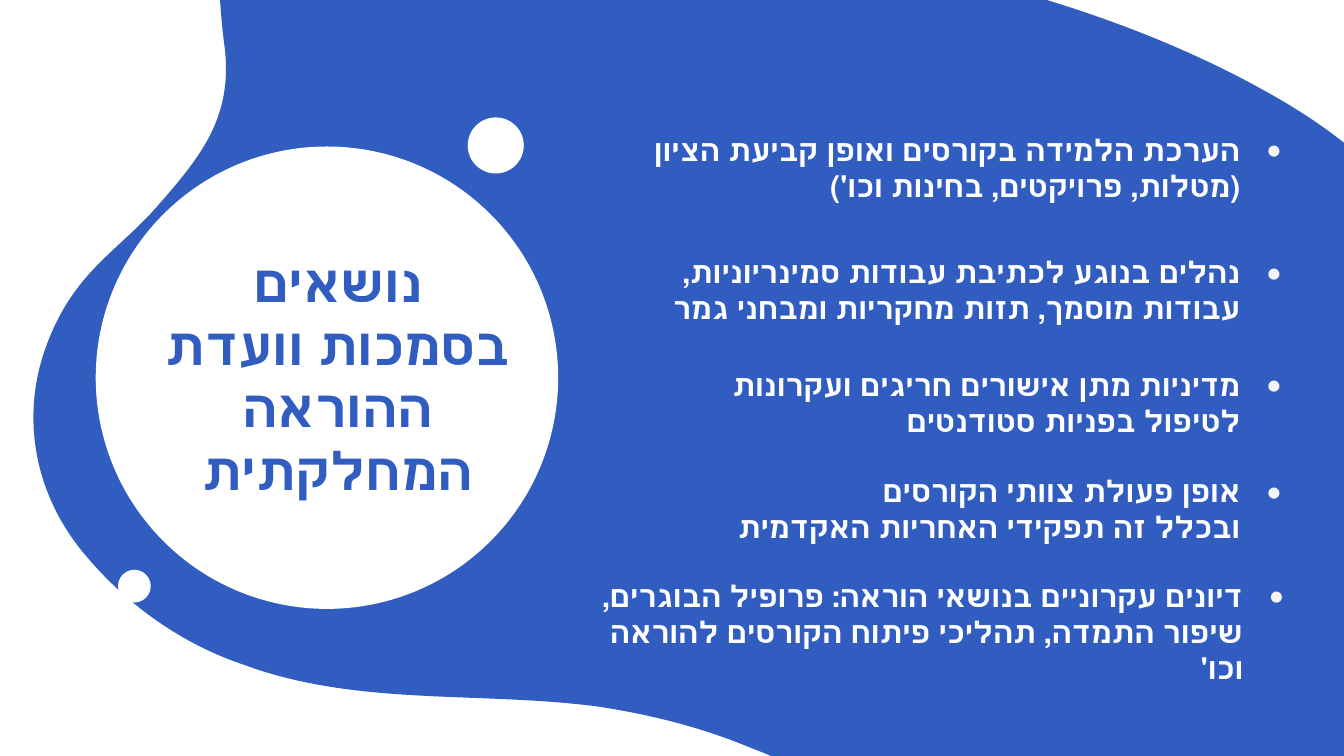
from copy import deepcopy
from dataclasses import dataclass

from lxml import etree
from pptx import Presentation
from pptx.dml.color import RGBColor
from pptx.enum.lang import MSO_LANGUAGE_ID
from pptx.enum.shapes import MSO_SHAPE
from pptx.enum.text import MSO_ANCHOR, MSO_AUTO_SIZE, PP_ALIGN
from pptx.oxml.ns import qn
from pptx.util import Cm, Pt

OVAL = MSO_SHAPE.OVAL
TOP = MSO_ANCHOR.TOP
NO_FIT = MSO_AUTO_SIZE.NONE
CENTER, RIGHT = PP_ALIGN.CENTER, PP_ALIGN.RIGHT
HEBREW = MSO_LANGUAGE_ID.HEBREW


@dataclass
class Theme:
    blue: str = "305DBF"
    white: str = "FFFFFF"
    bullet: str = "F5F5F5"
    font: str = "Lato"
    title_size: int = 28
    body_size: int = 16


theme = Theme()


def write_text(box, text, size, color, align, bullet=None):
    frame = box.text_frame
    frame.word_wrap = True
    frame.auto_size = NO_FIT
    frame.vertical_anchor = TOP
    frame.margin_left = frame.margin_right = Cm(0.25)
    frame.margin_top = frame.margin_bottom = Cm(0.25)
    para = frame.paragraphs[0]
    para.text = text
    para.alignment = align
    para.line_spacing = 1.0
    properties = para._p.get_or_add_pPr()
    properties.set("rtl", "1")
    if bullet:
        properties.set("marL", str(Cm(0.79)))
        properties.set("indent", str(-Cm(0.79)))
        bullet_color = etree.SubElement(properties, qn("a:buClr"))
        etree.SubElement(bullet_color, qn("a:srgbClr"), val=bullet)
        etree.SubElement(properties, qn("a:buFont"), typeface=theme.font)
        etree.SubElement(properties, qn("a:buChar"), char="•")
    for span in para.runs:
        span.font.name = theme.font
        span.font.size = Pt(size)
        span.font.bold = True
        span.font.language_id = HEBREW
        span.font.color.rgb = RGBColor.from_string(color)
    for line_break in para._p.findall(qn("a:br")):
        line_break.insert(0, deepcopy(para.runs[0]._r.rPr))


def paint(shape, color):
    shape.shadow.inherit = False
    shape.fill.solid()
    shape.fill.fore_color.rgb = RGBColor.from_string(color)
    shape.line.fill.background()


deck = Presentation()
deck.slide_width, deck.slide_height = Cm(25.4), Cm(14.29)
page = deck.slides.add_slide(deck.slide_layouts[5])

blob_start = (6.63, -5.72)
blob_curves = [
    (7.42, -6.05, 8.41, -6.17, 9.73, -5.94),
    (11.79, -5.59, 13.39, -3.91, 14.53, -2.26),
    (15.49, -0.86, 17.32, -0.66, 18.8, -0.28),
    (20.6, 0.2, 22.4, 0.86, 24.05, 1.8),
    (27.46, 3.73, 28.4, 6.35, 28.17, 9.63),
    (28.09, 10.31, 27.91, 12.17, 26.19, 13.92),
    (25.55, 14.61, 24.82, 15.09, 24.03, 15.42),
    (22, 16.28, 19.53, 16.13, 16.74, 15.19),
    (15.85, 14.88, 15.01, 14.45, 14.15, 14.12),
    (13.23, 13.74, 12.29, 13.51, 11.33, 13.36),
    (9.09, 13.06, 6.76, 13.36, 4.62, 12.57),
    (3.48, 12.19, 2.46, 11.48, 1.68, 10.57),
    (0.66, 9.42, 0.36, 7.9, 0.89, 6.5),
    (1.4, 5.16, 2.18, 4.78, 2.92, 3.96),
    (3.81, 2.95, 4.42, 2.21, 4.24, 0.84),
    (4.01, -0.89, 3.96, -4.6, 6.63, -5.72),
]
builder = page.shapes.build_freeform(Cm(blob_start[0]), Cm(blob_start[1]))
builder.add_line_segments([(Cm(curve[4]), Cm(curve[5])) for curve in blob_curves], close=True)
blob = builder.convert_to_shape()
paint(blob, theme.blue)
outline = blob._element.spPr.find(".//" + qn("a:path"))
for line, curve in zip(outline.findall(qn("a:lnTo")), blob_curves):
    bezier = etree.Element(qn("a:cubicBezTo"))
    for x, y in zip(curve[::2], curve[1::2]):
        etree.SubElement(bezier, qn("a:pt"), x=str(Cm(x) - blob.left), y=str(Cm(y) - blob.top))
    outline.replace(line, bezier)

circles = [(1.81, 2.77, 8.74), (8.84, 2.22, 1.06), (2.23, 10.77, 0.62)]
for left, top, diameter in circles:
    circle = page.shapes.add_shape(OVAL, Cm(left), Cm(top), Cm(diameter), Cm(diameter))
    paint(circle, theme.white)

title = page.shapes.title
title.left, title.top, title.width, title.height = Cm(2.65), Cm(4.48), Cm(7.47), Cm(3.28)
write_text(title, "נושאים בסמכות וועדת ההוראה המחלקתית",
           size=theme.title_size, color=theme.blue, align=CENTER)
page.shapes._spTree.append(title._element)

topics = [
    (10.98, 2.24, 13.51, "הערכת הלמידה בקורסים ואופן קביעת הציון (מטלות, פרויקטים, בחינות וכו')"),
    (10.98, 4.55, 13.51, "נהלים בנוגע לכתיבת עבודות סמינריוניות, \vעבודות מוסמך, תזות מחקריות ומבחני גמר"),
    (10.98, 6.68, 13.51, "מדיניות מתן אישורים חריגים ועקרונות\vלטיפול בפניות סטודנטים"),
    (10.98, 8.69, 13.51, "אופן פעולת צוותי הקורסים\vובכלל זה תפקידי האחריות האקדמית"),
    (10.52, 10.67, 14.02, "דיונים עקרוניים בנושאי הוראה: פרופיל הבוגרים, שיפור התמדה, תהליכי פיתוח הקורסים להוראה וכו'"),
]
for left, top, width, text in topics:
    box = page.shapes.add_textbox(Cm(left), Cm(top), Cm(width), Cm(2.01))
    write_text(box, text, size=theme.body_size, color=theme.white,
               align=RIGHT, bullet=theme.bullet)

deck.save("out.pptx")
